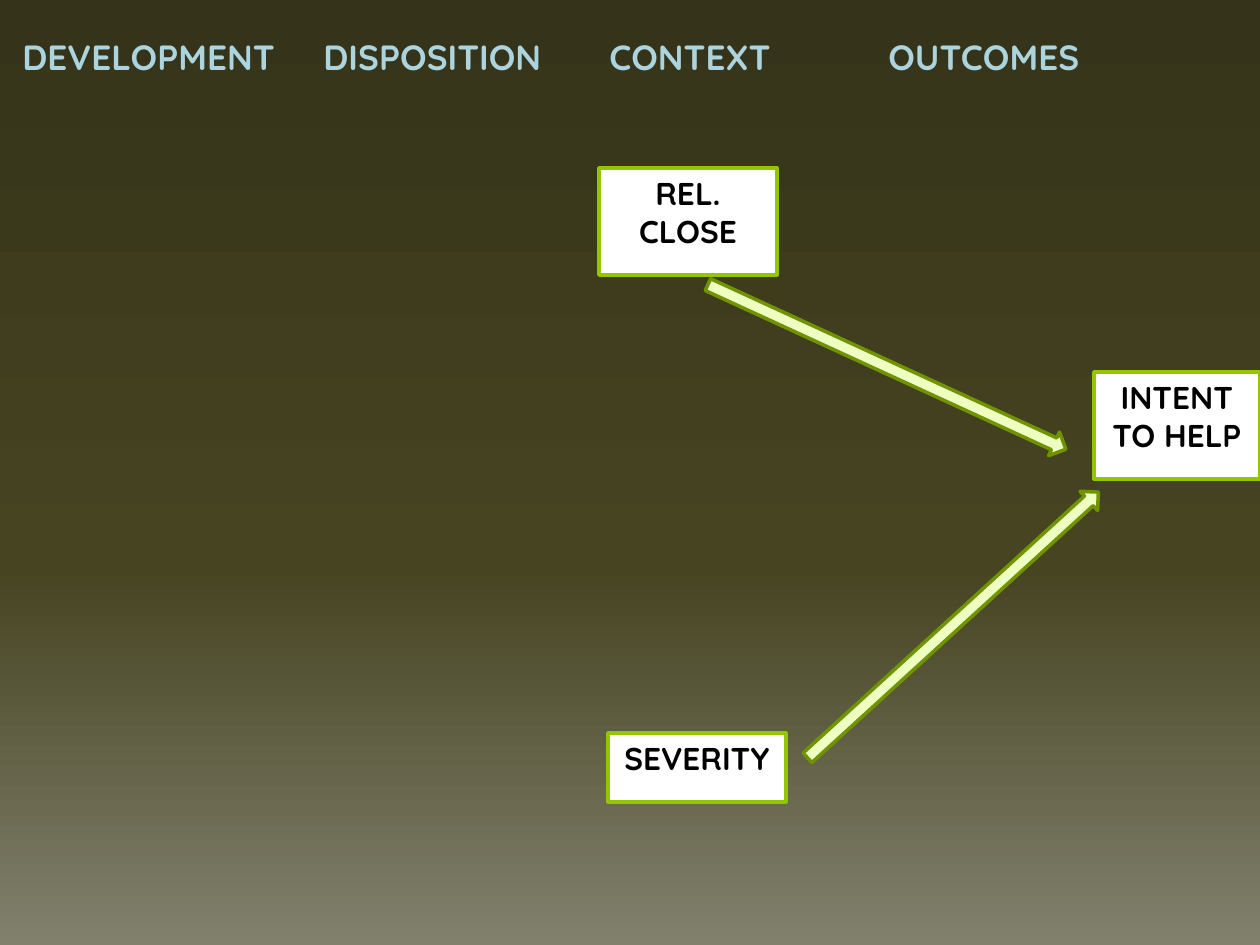
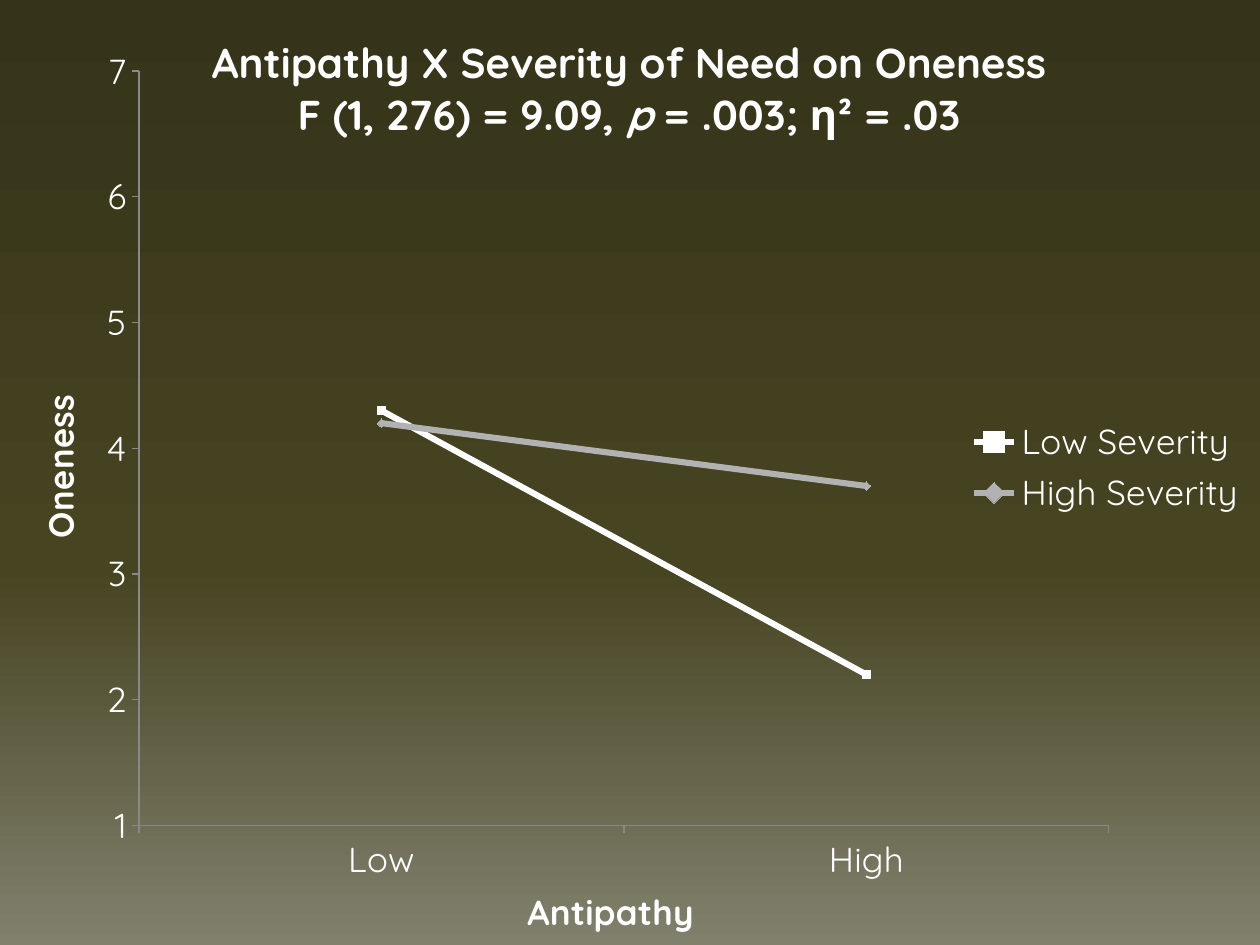
from copy import deepcopy

from lxml import etree
from pptx import Presentation
from pptx.chart.data import CategoryChartData
from pptx.dml.color import RGBColor
from pptx.enum.chart import XL_CHART_TYPE, XL_LEGEND_POSITION, XL_MARKER_STYLE, XL_TICK_MARK
from pptx.enum.shapes import MSO_SHAPE
from pptx.enum.text import MSO_ANCHOR, PP_ALIGN
from pptx.oxml.ns import qn
from pptx.util import Pt

RECTANGLE = MSO_SHAPE.RECTANGLE
RIGHT_ARROW = MSO_SHAPE.RIGHT_ARROW
TOP = MSO_ANCHOR.TOP
CENTER = PP_ALIGN.CENTER
LINE_MARKERS = XL_CHART_TYPE.LINE_MARKERS
LEGEND_RIGHT = XL_LEGEND_POSITION.RIGHT
OUTSIDE = XL_TICK_MARK.OUTSIDE
SQUARE = XL_MARKER_STYLE.SQUARE
DIAMOND = XL_MARKER_STYLE.DIAMOND

PX = 914400 // 126
WIDTH, HEIGHT = 1260, 945
FONT = "Quicksand"
COLORS = {
    "heading": "ACD4DE",
    "box": "FFFFFF",
    "box_line": "94C600",
    "box_text": "000000",
    "arrow": "EFFFC1",
    "arrow_line": "6F9400",
    "chart_text": "FFFFFF",
    "axis": "898989",
    "low": "FFFFFF",
    "high": "B2B2B2",
}
BACKGROUND = [(0, "353319"), (0.6, "464421"), (1, "81806D")]

HEADINGS = ["DEVELOPMENT", "DISPOSITION", "CONTEXT", "OUTCOMES"]
HEADINGS_AREA = (10, 29, 1207, 55)
HEADING_TABS = [301, 587, 866]
BOXES = [
    ("REL. CLOSE", (599, 168, 178, 107)),
    ("SEVERITY", (608, 733, 178, 69)),
    ("INTENT TO HELP", (1094, 372, 166, 107)),
]
ARROWS = [
    ((690, 354, 394, 26), 24.7),
    ((756, 612, 394, 26), 317.6),
]

CHART_TITLE = [
    [("Antipathy X Severity of Need on Oneness", False)],
    [("F (1, 276) = 9.09, ", False), ("p", True), (" = .003; η² = .03", False)],
]
CATEGORIES = ["Low", "High"]
SERIES = [
    ("Low Severity", [4.3, 2.2], "low", SQUARE),
    ("High Severity", [4.2, 3.7], "high", DIAMOND),
]
PLOT_AREA = (139, 72, 970, 763)
TITLE_CORNER = (208, 31)
CATEGORY_TITLE_CORNER = (521, 890)
VALUE_TITLE_CORNER = (28, 394)


def color(name):
    return RGBColor.from_string(COLORS[name])


def scaled(area):
    return [length * PX for length in area]


def style_font(font, size, color_name, bold=False, italic=False):
    font.name = FONT
    font.size = Pt(size)
    font.bold = bold
    font.italic = italic
    font.color.rgb = color(color_name)


def paint_background(master):
    fill = master.background.fill
    fill.gradient()
    fill.gradient_angle = 270
    stop_list = next(master.element.iter(qn("a:gsLst")))
    stop_list.append(deepcopy(stop_list[-1]))
    for stop, (position, value) in zip(fill.gradient_stops, BACKGROUND):
        stop.position = position
        stop.color.rgb = RGBColor.from_string(value)


def add_filled_shape(slide, kind, area, name):
    shape = slide.shapes.add_shape(kind, *scaled(area))
    shape.shadow.inherit = False
    shape.fill.solid()
    shape.fill.fore_color.rgb = color(name)
    shape.line.color.rgb = color(name + "_line")
    shape.line.width = Pt(2)
    return shape


def add_headings(slide):
    text_frame = slide.shapes.add_textbox(*scaled(HEADINGS_AREA)).text_frame
    text_frame.word_wrap = True
    paragraph = text_frame.paragraphs[0]
    paragraph.text = "\t".join(HEADINGS)
    style_font(paragraph.runs[0].font, 20, "heading", bold=True)
    properties = paragraph._p.get_or_add_pPr()
    tabs = etree.SubElement(properties, qn("a:tabLst"))
    for position in HEADING_TABS:
        etree.SubElement(tabs, qn("a:tab"), pos=str(position * PX), algn="l")


def add_box(slide, text, area):
    text_frame = add_filled_shape(slide, RECTANGLE, area, "box").text_frame
    text_frame.word_wrap = True
    text_frame.vertical_anchor = TOP
    text_frame.text = text
    paragraph = text_frame.paragraphs[0]
    paragraph.alignment = CENTER
    paragraph.space_after = Pt(10)
    style_font(paragraph.runs[0].font, 18, "box_text", bold=True)


def build_model_slide(slide):
    add_headings(slide)
    for text, area in BOXES:
        add_box(slide, text, area)
    for area, angle in ARROWS:
        add_filled_shape(slide, RIGHT_ARROW, area, "arrow").rotation = angle


def place_part(element, index, area, inner=False):
    for layout in element.findall(qn("c:layout")):
        element.remove(layout)
    layout = etree.Element(qn("c:layout"))
    manual = etree.SubElement(layout, qn("c:manualLayout"))
    settings = [("layoutTarget", "inner")] if inner else []
    settings += [("xMode", "edge"), ("yMode", "edge")]
    sizes = (WIDTH, HEIGHT, WIDTH, HEIGHT)
    settings += [(key, f"{length / size:.4f}") for key, length, size in zip("xywh", area, sizes)]
    for key, value in settings:
        etree.SubElement(manual, qn("c:" + key), val=value)
    element.insert(index, layout)


def style_axis(axis, title, corner):
    axis.has_major_gridlines = False
    axis.major_tick_mark = OUTSIDE
    axis.format.line.color.rgb = color("axis")
    axis.format.line.width = Pt(0.75)
    text_frame = axis.axis_title.text_frame
    text_frame.text = title
    style_font(text_frame.paragraphs[0].runs[0].font, 20, "chart_text", bold=True)
    place_part(axis.axis_title._element, 1, corner)


def add_chart_title(chart):
    text_frame = chart.chart_title.text_frame
    for index, line in enumerate(CHART_TITLE):
        paragraph = text_frame.add_paragraph() if index else text_frame.paragraphs[0]
        for text, italic in line:
            run = paragraph.add_run()
            run.text = text
            style_font(run.font, 24, "chart_text", bold=True, italic=italic)
    chart.chart_title.include_in_layout = True
    title = chart.chart_title._element
    place_part(title, 1, TITLE_CORNER)
    title.find(qn("c:overlay")).set("val", "1")


def style_series(series, color_name, marker_style):
    series.smooth = False
    series.format.line.color.rgb = color(color_name)
    series.format.line.width = Pt(3.5)
    marker = series.marker
    marker.style = marker_style
    marker.size = 5
    marker.format.fill.solid()
    marker.format.fill.fore_color.rgb = color(color_name)
    marker.format.line.color.rgb = color(color_name)


def build_chart_slide(slide):
    chart_data = CategoryChartData()
    chart_data.categories = CATEGORIES
    for name, values, *_ in SERIES:
        chart_data.add_series(name, values)
    area = scaled((0, 0, WIDTH, HEIGHT))
    chart = slide.shapes.add_chart(LINE_MARKERS, *area, chart_data).chart
    style_font(chart.font, 20, "chart_text")
    add_chart_title(chart)
    chart.has_legend = True
    chart.legend.position = LEGEND_RIGHT
    chart.legend.include_in_layout = False
    style_axis(chart.category_axis, "Antipathy", CATEGORY_TITLE_CORNER)
    style_axis(chart.value_axis, "Oneness", VALUE_TITLE_CORNER)
    chart.value_axis.minimum_scale = 1
    chart.value_axis.maximum_scale = 7
    chart.value_axis.major_unit = 1
    plot = chart.plots[0]
    plot.vary_by_categories = False
    for series, (_, _, color_name, marker_style) in zip(plot.series, SERIES):
        style_series(series, color_name, marker_style)
    plot_area = next(chart._chartSpace.iter(qn("c:plotArea")))
    place_part(plot_area, 0, PLOT_AREA, inner=True)


def main():
    presentation = Presentation()
    presentation.slide_width, presentation.slide_height = scaled((WIDTH, HEIGHT))
    paint_background(presentation.slide_master)
    blank = presentation.slide_layouts[6]
    for build in (build_model_slide, build_chart_slide):
        build(presentation.slides.add_slide(blank))
    presentation.save("out.pptx")


if __name__ == "__main__":
    main()
